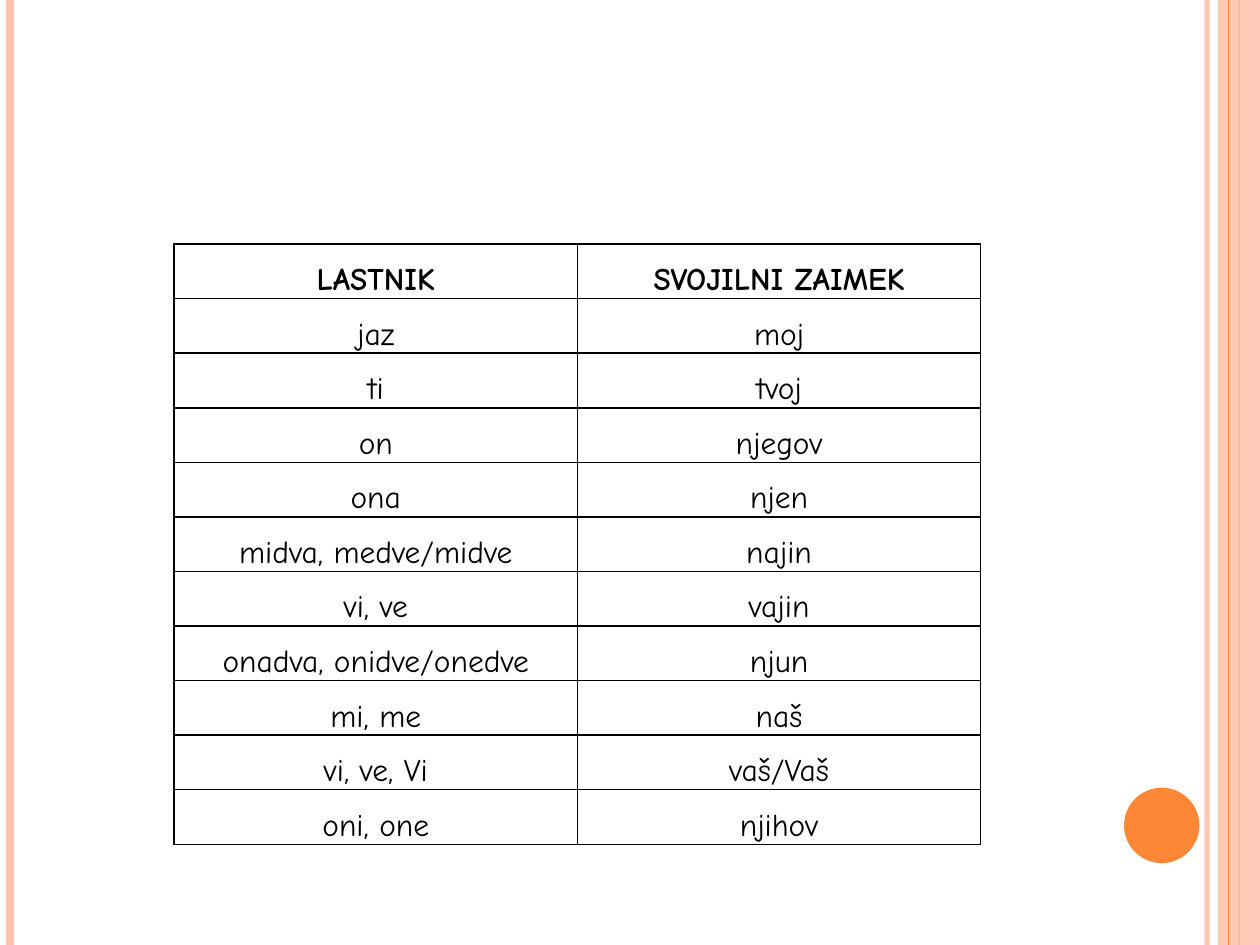
from lxml import etree
from pptx import Presentation
from pptx import util as u
from pptx.dml.color import RGBColor
from pptx.enum import shapes, text
from pptx.oxml.ns import qn

COLORS = {"peach": "FEC3AE", "orange": "FE8637", "black": "000000"}
WIDTH, HEIGHT = 25.4, 19.05
PRONOUNS = [
    ("LASTNIK", "SVOJILNI ZAIMEK"),
    ("jaz", "moj"),
    ("ti", "tvoj"),
    ("on", "njegov"),
    ("ona", "njen"),
    ("midva, medve/midve", "najin"),
    ("vi, ve", "vajin"),
    ("onadva, onidve/onedve", "njun"),
    ("mi, me", "naš"),
    ("vi, ve, Vi", "vaš/Vaš"),
    ("oni, one", "njihov"),
]


def apply(target, values):
    for name, value in values.items():
        setattr(target, name, value)


def add_alpha(fill_parent, percent):
    color = next(fill_parent.iter(qn("a:srgbClr")))
    etree.SubElement(color, qn("a:alpha"), val=str(percent * 1000))


class SlideBuilder:
    font = {"name": "Comic Neue", "size": u.Pt(18)}
    paragraph = {"alignment": text.PP_ALIGN.CENTER, "line_spacing": 1.5}
    cell = {"margin_left": u.Cm(0.18), "margin_right": u.Cm(0.18),
            "margin_top": 0, "margin_bottom": 0}

    def __init__(self, slide):
        self.slide = slide

    def color(self, name):
        return RGBColor.from_string(COLORS[name])

    def vertical_line(self, x, color, width, alpha=None):
        line = self.slide.shapes.add_connector(
            shapes.MSO_CONNECTOR.STRAIGHT, u.Cm(x), 0, u.Cm(x), u.Cm(HEIGHT))
        line.line.color.rgb = self.color(color)
        line.line.width = u.Pt(width)
        properties = line._element.spPr
        if alpha:
            add_alpha(properties, alpha)
        etree.SubElement(properties, qn("a:effectLst"))

    def shape(self, kind, left, top, width, height, color, alpha=None):
        shape = self.slide.shapes.add_shape(
            kind, u.Cm(left), u.Cm(top), u.Cm(width), u.Cm(height))
        shape.shadow.inherit = False
        shape.fill.solid()
        shape.fill.fore_color.rgb = self.color(color)
        shape.line.fill.background()
        if alpha:
            add_alpha(shape._element.spPr, alpha)

    def cell_borders(self, cell, color, width):
        properties = cell._tc.get_or_add_tcPr()
        for index, side in enumerate(("lnL", "lnR", "lnT", "lnB")):
            border = etree.Element(qn(f"a:{side}"), w=str(u.Pt(width)))
            fill = etree.SubElement(border, qn("a:solidFill"))
            etree.SubElement(fill, qn("a:srgbClr"), val=COLORS[color])
            properties.insert(index, border)

    def table(self, rows, left, top, column_width, row_height):
        columns = len(rows[0])
        table = self.slide.shapes.add_table(
            len(rows), columns, u.Cm(left), u.Cm(top),
            u.Cm(column_width * columns), u.Cm(row_height * len(rows))).table
        apply(table, {"first_row": False, "horz_banding": False})
        for column in table.columns:
            column.width = u.Cm(column_width)
        for row_index, row in enumerate(rows):
            table.rows[row_index].height = u.Cm(row_height)
            for column_index, words in enumerate(row):
                cell = table.cell(row_index, column_index)
                apply(cell, self.cell)
                cell.fill.background()
                self.cell_borders(cell, "black", 1)
                paragraph = cell.text_frame.paragraphs[0]
                apply(paragraph, self.paragraph)
                run = paragraph.add_run()
                run.text = words
                apply(run.font, {**self.font, "bold": row_index == 0})
                run.font.color.rgb = self.color("black")


def main():
    presentation = Presentation()
    apply(presentation, {"slide_width": u.Cm(WIDTH), "slide_height": u.Cm(HEIGHT)})
    builder = SlideBuilder(presentation.slides.add_slide(presentation.slide_layouts[6]))
    builder.vertical_line(24.33, "peach", 3, alpha=93)
    builder.vertical_line(0.21, "peach", 4.5)
    builder.vertical_line(24.98, "orange", 1.5)
    builder.shape(shapes.MSO_SHAPE.RECTANGLE, 24.55, 0, 0.85, HEIGHT, "peach", alpha=87)
    builder.vertical_line(24.76, "orange", 0.75)
    builder.shape(shapes.MSO_SHAPE.OVAL, 22.66, 15.88, 1.52, 1.52, "orange")
    builder.table(PRONOUNS, left=3.51, top=4.92, column_width=8.13, row_height=1.1)
    presentation.save("out.pptx")


if __name__ == "__main__":
    main()
